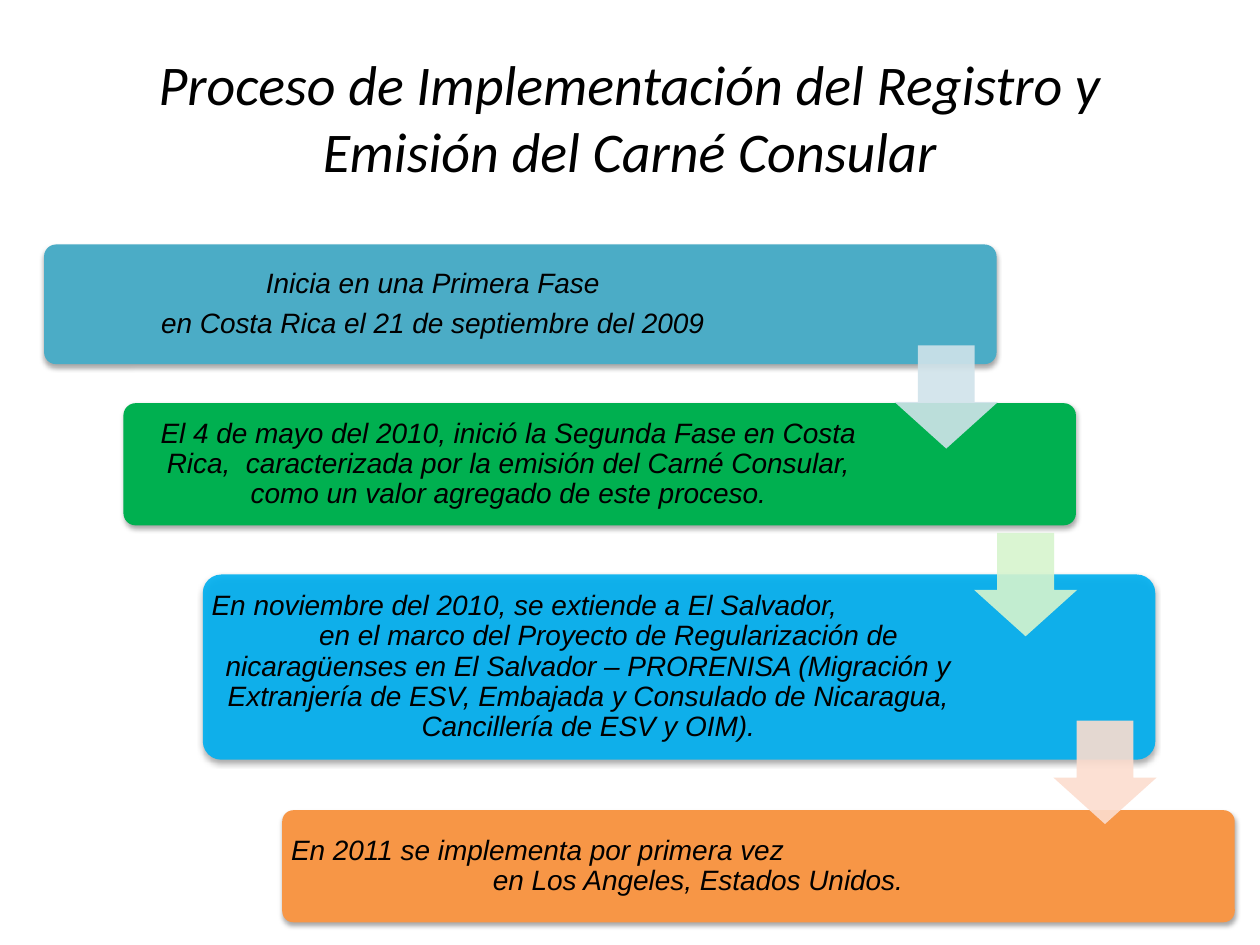
from lxml import etree
from pptx import Presentation
from pptx.dml.color import RGBColor
from pptx.enum.shapes import MSO_SHAPE
from pptx.enum.text import MSO_ANCHOR, PP_ALIGN
from pptx.oxml.ns import qn
from pptx.util import Inches, Pt

ROUND_RECT = MSO_SHAPE.ROUNDED_RECTANGLE
DOWN_ARROW = MSO_SHAPE.DOWN_ARROW
MIDDLE = MSO_ANCHOR.MIDDLE
LEFT, CENTER = PP_ALIGN.LEFT, PP_ALIGN.CENTER

COLORS = {
    "text": "000000",
    "teal": "4BACC6",
    "green": "00B050",
    "blue": "00B0F0",
    "orange": "F79646",
    "pale_blue": "D0E3EA",
    "pale_green": "D6F4CE",
    "pale_orange": "FCDDCF",
}

TITLE = "Proceso de Implementación del Registro y Emisión del Carné Consular"

STEPS = [
    (1.94, 0.95, 6.17, "teal", 100, 5.6, [
        ("Inicia en una Primera Fase", CENTER, 0),
        ("en Costa Rica el 21 de septiembre del 2009", CENTER, 0),
    ]),
    (3.2, 0.97, 6.11, "green", 100, 0, [
        ("El 4 de mayo del 2010, inició la Segunda Fase en Costa Rica,  "
         "caracterizada por la emisión del Carné Consular, como un valor "
         "agregado de este proceso.", CENTER, 0),
    ]),
    (4.56, 1.47, 6.12, "blue", 91, 0, [
        ("En noviembre del 2010, se extiende a El Salvador,", LEFT, 0),
        ("en el marco del Proyecto de Regularización de nicaragüenses en "
         "El Salvador – PRORENISA (Migración y Extranjería de ESV, Embajada "
         "y Consulado de Nicaragua, Cancillería de ESV y OIM).", CENTER, 0.32),
    ]),
    (6.43, 0.89, 6.11, "orange", 100, 0, [
        ("En 2011 se implementa por primera vez", LEFT, 0),
        ("en Los Angeles, Estados Unidos.", CENTER, 0.49),
    ]),
]

ARROWS = ["pale_blue", "pale_green", "pale_orange"]
STEP_X = 0.63
ARROW_STEP_Y = 1.49


class SlideBuilder:
    def __init__(self, slide):
        self.slide = slide
        self.title_font = "Calibri"
        self.body_font = "Arial"

    def shape(self, kind, x, y, w, h, color, adjustments, opacity=100):
        sp = self.slide.shapes.add_shape(
            kind, Inches(x), Inches(y), Inches(w), Inches(h))
        for i, value in enumerate(adjustments):
            sp.adjustments[i] = value
        sp.shadow.inherit = False
        sp.fill.solid()
        sp.fill.fore_color.rgb = RGBColor.from_string(COLORS[color])
        sp.line.fill.background()
        if opacity < 100:
            clr = sp.fill._xPr.find(qn("a:solidFill"))[0]
            etree.SubElement(clr, qn("a:alpha"), val=str(opacity * 1000))
        return sp

    def card(self, x, y, w, h, color, opacity):
        sp = self.shape(ROUND_RECT, x, y, w, h, color, [0.1], opacity)
        effects = sp._element.spPr.find(qn("a:effectLst"))
        shadow = etree.SubElement(
            effects, qn("a:outerShdw"), blurRad=str(Pt(3.1)),
            dist=str(Pt(1.8)), dir="5400000", rotWithShape="0")
        clr = etree.SubElement(shadow, qn("a:srgbClr"), val=COLORS["text"])
        etree.SubElement(clr, qn("a:alpha"), val="35000")

    def arrow(self, x, y, color):
        self.shape(DOWN_ARROW, x, y, 0.82, 0.82, color, [0.55, 0.45], 90)

    def text(self, x, y, w, h, paragraphs, font, size, inset, spacing, gap=0):
        tb = self.slide.shapes.add_textbox(
            Inches(x), Inches(y), Inches(w), Inches(h))
        tf = tb.text_frame
        tf.word_wrap = True
        tf.vertical_anchor = MIDDLE
        tf.margin_left = tf.margin_right = Inches(inset)
        tf.margin_top = tf.margin_bottom = Inches(min(inset, 0.07))
        for i, (content, align, indent) in enumerate(paragraphs):
            p = tf.add_paragraph() if i else tf.paragraphs[0]
            p.text = content
            p.alignment = align
            p.line_spacing = spacing
            p.space_before = Pt(gap if i else 0)
            if indent:
                p._p.get_or_add_pPr().set("indent", str(Inches(indent)))
            p.font.name = font
            p.font.size = Pt(size)
            p.font.italic = True
            p.font.color.rgb = RGBColor.from_string(COLORS["text"])

    def title(self, content):
        self.text(0.5, 0.3, 9, 1.25, [(content, CENTER, 0)],
                  self.title_font, 32, 0.1, 1.0)

    def body(self, x, y, w, h, paragraphs, gap):
        self.text(x, y, w, h, paragraphs, self.body_font, 16, 0.07, 0.9, gap)


def main():
    prs = Presentation()
    prs.slide_width, prs.slide_height = Inches(10), Inches(7.5)
    s = SlideBuilder(prs.slides.add_slide(prs.slide_layouts[6]))
    s.title(TITLE)
    for i, (y, h, text_w, color, opacity, gap, paragraphs) in enumerate(STEPS):
        x = 0.35 + i * STEP_X
        s.card(x, y, 7.56, h, color, opacity)
        s.body(x, y, text_w, h, paragraphs, gap)
    for i, color in enumerate(ARROWS):
        s.arrow(7.1 + i * STEP_X, 2.74 + i * ARROW_STEP_Y, color)
    prs.save("out.pptx")


if __name__ == "__main__":
    main()
